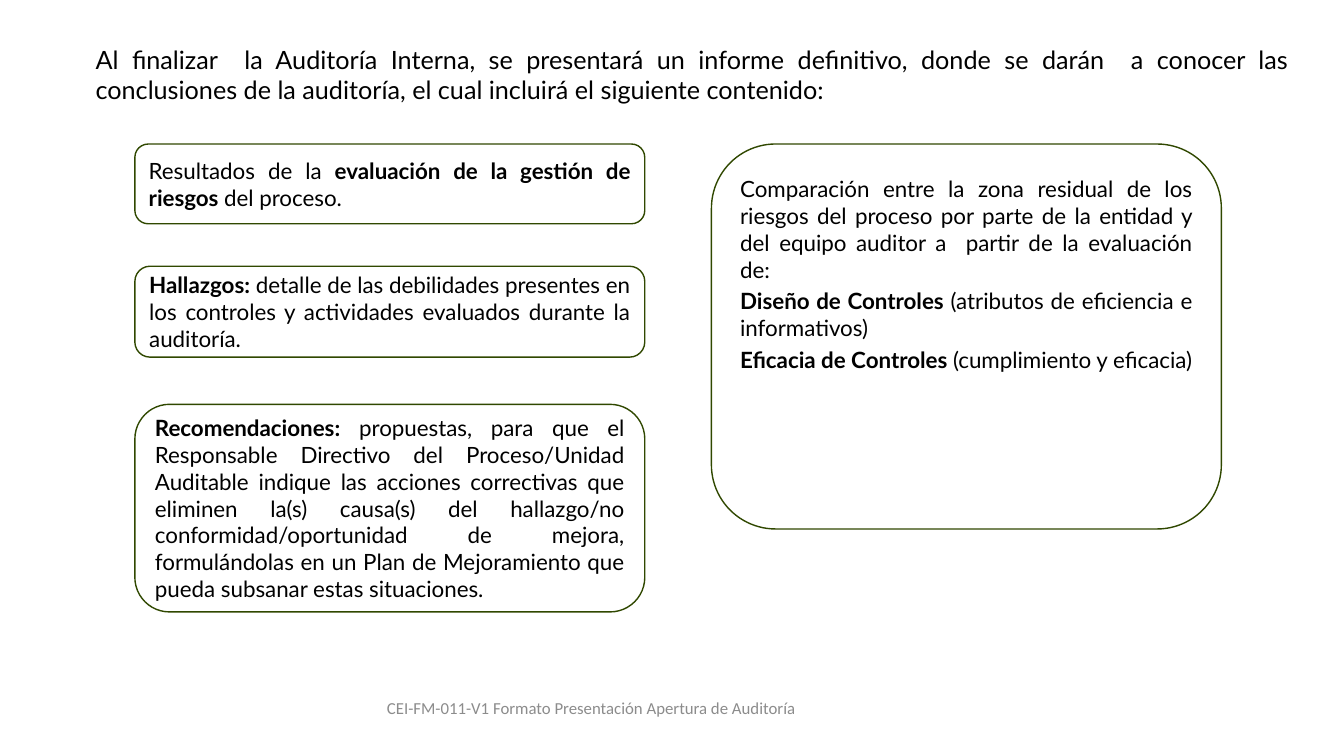
from pptx import Presentation
from pptx.dml.color import RGBColor
from pptx.enum.shapes import MSO_SHAPE
from pptx.enum.text import MSO_ANCHOR, MSO_AUTO_SIZE, PP_ALIGN
from pptx.util import Cm, Pt

BLACK = RGBColor(0x00, 0x00, 0x00)
WHITE = RGBColor(0xFF, 0xFF, 0xFF)
GREEN = RGBColor(0x30, 0x48, 0x00)
GREY = RGBColor(0x8C, 0x8C, 0x8C)

INTRO = ("Al finalizar  la Auditoría Interna, se presentará un informe definitivo, "
         "donde se darán  a conocer las conclusiones de la auditoría, "
         "el cual incluirá el siguiente contenido:")
FOOTER = "CEI-FM-011-V1 Formato Presentación Apertura de Auditoría"

LEFT, RIGHT, CARD_WIDTH = 3.4, 17.93, 12.85

# Each paragraph is a list of (text, bold) runs.
RESULTS = [[("Resultados de la", False),
            (" evaluación de la gestión de riesgos ", True),
            ("del proceso.", False)]]
FINDINGS = [[("Hallazgos:", True),
             (" detalle de las debilidades presentes en los controles y "
              "actividades evaluados durante la auditoría.", False)]]
RECOMMENDATIONS = [[
    ("Recomendaciones:", True),
    (" propuestas, para que el Responsable Directivo del Proceso/Unidad Auditable "
     "indique las acciones correctivas que eliminen la(s) causa(s) del hallazgo/no "
     "conformidad/oportunidad de mejora, formulándolas en un Plan de Mejoramiento "
     "que pueda subsanar estas situaciones.", False)]]
COMPARISON = [
    [("Comparación entre la zona residual de los riesgos del proceso por parte de la "
      "entidad y del equipo auditor a  partir de la evaluación de:", False)],
    [("Diseño de Controles ", True),
     ("(atributos de eficiencia e informativos)", False)],
    [("Eficacia de Controles ", True), ("(cumplimiento y eficacia)", False)],
]


def add_run(p, text, size, color=BLACK, font="Lato", bold=False):
    r = p.add_run()
    r.text = text
    r.font.name = font
    r.font.size = Pt(size)
    r.font.bold = bold
    r.font.color.rgb = color


def fill_title(s, text):
    sp = s.shapes.title
    sp.left, sp.top, sp.width, sp.height = Cm(2.41), Cm(1.12), Cm(30.07), Cm(1.45)
    tf = sp.text_frame
    tf.margin_left = tf.margin_right = tf.margin_top = tf.margin_bottom = 0
    tf.vertical_anchor = MSO_ANCHOR.TOP
    tf.auto_size = MSO_AUTO_SIZE.NONE
    p = tf.paragraphs[0]
    p.alignment = PP_ALIGN.JUSTIFY
    add_run(p, text, 18)


def add_card(s, left, top, height, paragraphs, anchor=MSO_ANCHOR.MIDDLE):
    """Add a rounded card with justified text and return its text frame."""
    sp = s.shapes.add_shape(MSO_SHAPE.ROUNDED_RECTANGLE,
                            Cm(left), Cm(top), Cm(CARD_WIDTH), Cm(height))
    sp.shadow.inherit = False
    sp.fill.solid()
    sp.fill.fore_color.rgb = WHITE
    sp.line.color.rgb = GREEN
    sp.line.width = Pt(1)
    tf = sp.text_frame
    tf.word_wrap = True
    tf.vertical_anchor = anchor
    for i, runs in enumerate(paragraphs):
        p = tf.add_paragraph() if i else tf.paragraphs[0]
        p.alignment = PP_ALIGN.JUSTIFY
        p.space_after = Pt(3.2)
        for text, bold in runs:
            add_run(p, text, 16, bold=bold)
    return tf


def add_footer(s, text):
    tf = s.shapes.add_textbox(Cm(9.19), Cm(17.32), Cm(11.43), Cm(1.02)).text_frame
    tf.word_wrap = True
    tf.vertical_anchor = MSO_ANCHOR.MIDDLE
    p = tf.paragraphs[0]
    p.alignment = PP_ALIGN.CENTER
    add_run(p, text, 12, GREY, "Calibri")


def main():
    prs = Presentation()
    prs.slide_width, prs.slide_height = Cm(33.87), Cm(19.05)
    s = prs.slides.add_slide(prs.slide_layouts.get_by_name("Title Only"))
    fill_title(s, INTRO)
    add_card(s, LEFT, 3.63, 2.01, RESULTS)
    add_card(s, LEFT, 6.71, 2.29, FINDINGS)
    add_card(s, LEFT, 10.19, 5.23, RECOMMENDATIONS)
    tf = add_card(s, RIGHT, 3.63, 9.7, COMPARISON, MSO_ANCHOR.TOP)
    tf.margin_top = Cm(0.32)
    add_footer(s, FOOTER)
    prs.save("out.pptx")


if __name__ == "__main__":
    main()
